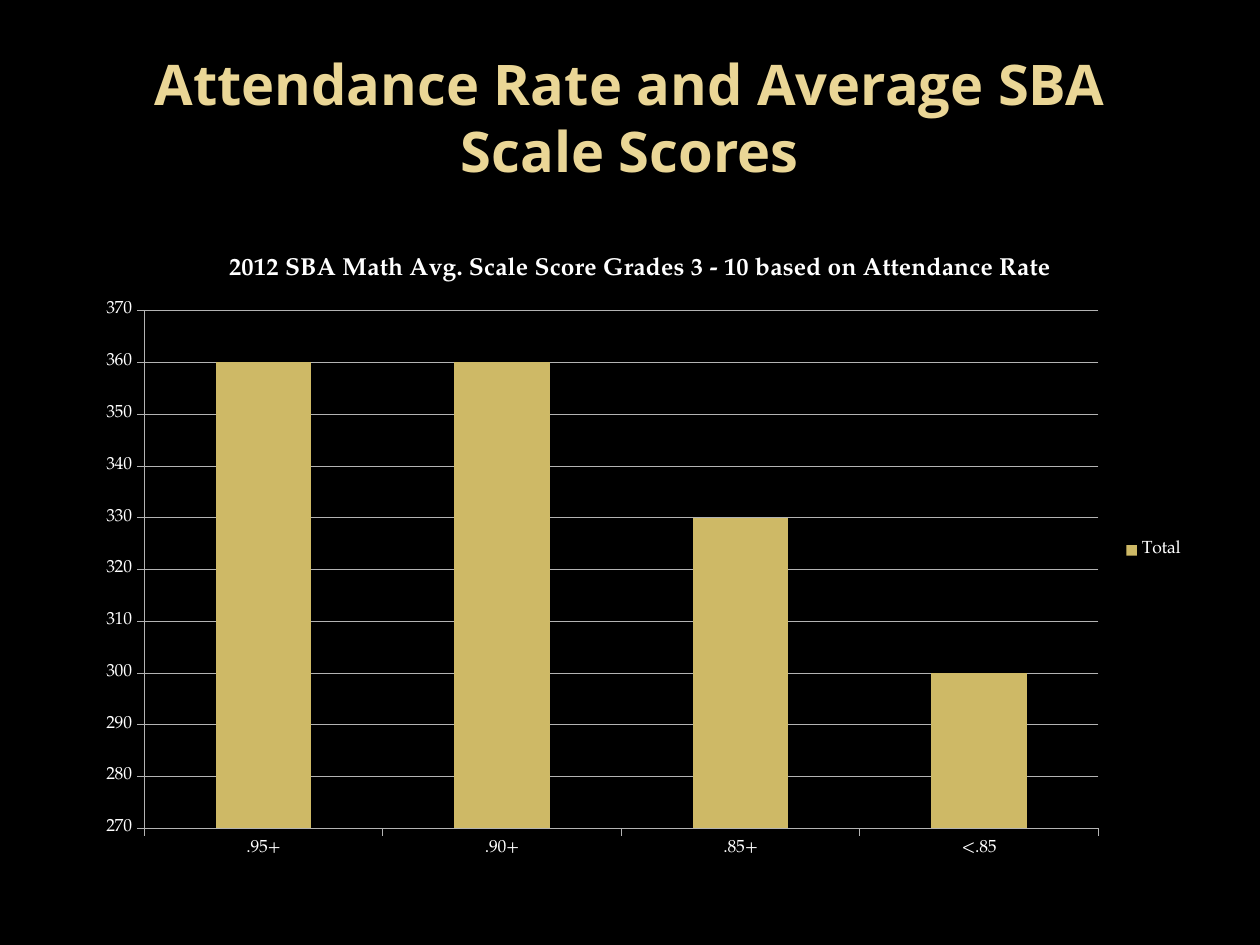
from dataclasses import dataclass

from pptx import Presentation
from pptx import util as u
from pptx.chart.data import CategoryChartData
from pptx.dml.color import RGBColor
from pptx.enum import chart as kinds, text

Pt = u.Pt


@dataclass(frozen=True)
class Theme:
    """Colours, fonts and type sizes of the slide."""
    back: str = "000000"
    head: str = "EAD696"
    bar: str = "CEB966"
    ink: str = "FFFFFF"
    grid: str = "B3B3B3"
    sans: str = "Open Sans"
    serif: str = "TeX Gyre Pagella"
    big: int = 32
    mid: int = 14
    small: int = 10


THEME = Theme()
SCORES = {".95+": 360, ".90+": 360, ".85+": 330, "<.85": 300}


def style(font, name, size, color, bold=False):
    """Set the face, size, colour and weight of a font."""
    font.name, font.size, font.bold = name, Pt(size), bold
    font.color.rgb = RGBColor.from_string(color)


def rule(line):
    """Draw a line in the thin grid colour."""
    line.width = Pt(0.5)
    line.color.rgb = RGBColor.from_string(THEME.grid)


def add_title(slide, box, words):
    """Place the centred heading in its box."""
    frame = slide.shapes.add_textbox(*map(Pt, box)).text_frame
    frame.word_wrap = True
    frame.vertical_anchor = text.MSO_ANCHOR.MIDDLE
    para = frame.paragraphs[0]
    para.text = words
    para.alignment = text.PP_ALIGN.CENTER
    style(para.font, THEME.sans, THEME.big, THEME.head, True)


def add_scores(slide, box, words):
    """Place the column chart of scores in its box."""
    data = CategoryChartData()
    data.categories = list(SCORES)
    data.add_series("Total", SCORES.values())
    chart = slide.shapes.add_chart(
        kinds.XL_CHART_TYPE.COLUMN_CLUSTERED, *map(Pt, box), data).chart
    style(chart.font, THEME.serif, THEME.small, THEME.ink)

    chart.has_title = True
    chart.chart_title.include_in_layout = False
    para = chart.chart_title.text_frame.paragraphs[0]
    para.text = words
    style(para.font, THEME.serif, THEME.mid, THEME.ink, True)

    chart.has_legend = True
    chart.legend.position = kinds.XL_LEGEND_POSITION.RIGHT
    chart.legend.include_in_layout = False

    plot = chart.plots[0]
    plot.gap_width = 150
    plot.vary_by_categories = False
    fill = plot.series[0].format.fill
    fill.solid()
    fill.fore_color.rgb = RGBColor.from_string(THEME.bar)

    for axis in (chart.category_axis, chart.value_axis):
        axis.major_tick_mark = kinds.XL_TICK_MARK.OUTSIDE
        axis.minor_tick_mark = kinds.XL_TICK_MARK.NONE
        rule(axis.format.line)
    scale = chart.value_axis
    scale.minimum_scale, scale.maximum_scale, scale.major_unit = 270, 370, 10
    scale.tick_labels.number_format = "0"
    scale.tick_labels.number_format_is_linked = False
    rule(scale.major_gridlines.format.line)


def main():
    """Build and save the slide."""
    deck = Presentation()
    deck.slide_width, deck.slide_height = Pt(720), Pt(540)
    slide = deck.slides.add_slide(deck.slide_layouts[6])
    fill = slide.background.fill
    fill.solid()
    fill.fore_color.rgb = RGBColor.from_string(THEME.back)
    add_title(slide, (36, 21.6, 648, 90),
              "Attendance Rate and Average SBA Scale Scores")
    add_scores(slide, (48, 131.5, 636, 366),
               "2012 SBA Math Avg. Scale Score Grades 3 - 10 "
               "based on Attendance Rate")
    deck.save("out.pptx")


if __name__ == "__main__":
    main()
